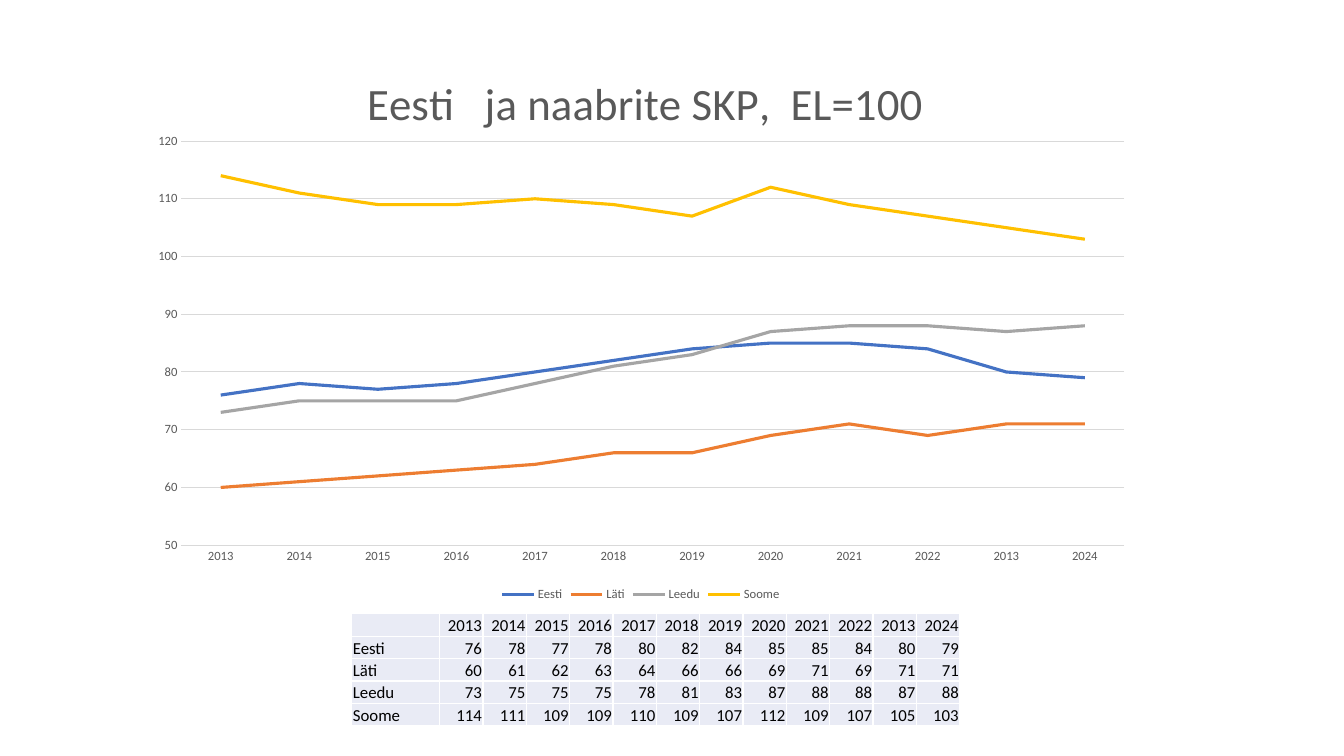
from dataclasses import dataclass

from lxml.etree import SubElement
from pptx import Presentation
from pptx.chart.data import CategoryChartData
from pptx.dml.color import RGBColor as Color
from pptx.enum.chart import XL_CHART_TYPE as ChartType
from pptx.enum.chart import XL_LEGEND_POSITION as LegendPosition
from pptx.enum.chart import XL_TICK_MARK as TickMark
from pptx.enum.text import MSO_ANCHOR as Anchor
from pptx.enum.text import PP_ALIGN as Align
from pptx.oxml.ns import qn
from pptx.util import Inches, Pt


@dataclass(frozen=True)
class Theme:
    font: str = "Calibri"
    ink: str = "000000"
    muted: str = "595959"
    grid: str = "D9D9D9"
    cell: str = "E9EBF5"
    border: str = "FFFFFF"
    lines: tuple = ("4472C4", "ED7D31", "A5A5A5", "FFC000")
    title_size: int = 32
    table_size: int = 12
    label_size: int = 9


@dataclass(frozen=True)
class Box:
    left: float
    top: float
    width: float
    height: float

    def lengths(self):
        return [Inches(side) for side in (self.left, self.top, self.width, self.height)]


THEME = Theme()
TITLE = "Eesti   ja naabrite SKP,  EL=100"
YEARS = ["2013", "2014", "2015", "2016", "2017", "2018",
         "2019", "2020", "2021", "2022", "2013", "2024"]
GDP = {
    "Eesti": [76, 78, 77, 78, 80, 82, 84, 85, 85, 84, 80, 79],
    "Läti": [60, 61, 62, 63, 64, 66, 66, 69, 71, 69, 71, 71],
    "Leedu": [73, 75, 75, 75, 78, 81, 83, 87, 88, 88, 87, 88],
    "Soome": [114, 111, 109, 109, 110, 109, 107, 112, 109, 107, 105, 103],
}


def style_font(font, size, color):
    font.name = THEME.font
    font.size = Pt(size)
    font.bold = False
    font.color.rgb = Color.from_string(color)


def style_line(line, color, width):
    line.color.rgb = Color.from_string(color)
    line.width = Pt(width)


def set_layout(parent, index, settings):
    for old in parent.findall(qn("c:layout")):
        parent.remove(old)
    layout = SubElement(parent, qn("c:layout"))
    parent.insert(index, layout)
    manual = SubElement(layout, qn("c:manualLayout"))
    for name, value in settings.items():
        SubElement(manual, qn(f"c:{name}")).set("val", str(value))


def place_chart_parts(chart, box):
    set_layout(chart.element.find(".//" + qn("c:title")), 1, {
        "xMode": "edge", "yMode": "edge",
        "x": 2.2 / box.width, "y": 0.23 / box.height,
    })
    set_layout(chart.element.find(".//" + qn("c:plotArea")), 0, {
        "layoutTarget": "inner", "xMode": "edge", "yMode": "edge",
        "x": 0.44 / box.width, "y": 1 / box.height,
        "w": 9.35 / box.width, "h": 4.01 / box.height,
    })


def add_gdp_chart(page, box):
    data = CategoryChartData()
    data.categories = YEARS
    for country, values in GDP.items():
        data.add_series(country, values)
    chart = page.shapes.add_chart(ChartType.LINE, *box.lengths(), data).chart
    style_font(chart.font, THEME.label_size, THEME.muted)

    chart.has_title = True
    title = chart.chart_title.text_frame
    title.text = TITLE
    style_font(title.paragraphs[0].font, THEME.title_size, THEME.muted)

    chart.has_legend = True
    chart.legend.position = LegendPosition.BOTTOM
    chart.legend.include_in_layout = False
    style_font(chart.legend.font, THEME.label_size, THEME.muted)

    for axis in (chart.category_axis, chart.value_axis):
        axis.major_tick_mark = axis.minor_tick_mark = TickMark.NONE
        style_font(axis.tick_labels.font, THEME.label_size, THEME.muted)
    style_line(chart.category_axis.format.line, THEME.grid, 0.75)
    scale = chart.value_axis
    scale.minimum_scale, scale.maximum_scale, scale.major_unit = 50, 120, 10
    scale.format.line.fill.background()
    style_line(scale.major_gridlines.format.line, THEME.grid, 0.75)

    chart.plots[0].vary_by_categories = False
    for series, color in zip(chart.plots[0].series, THEME.lines):
        series.smooth = False
        style_line(series.format.line, color, 2.25)
    place_chart_parts(chart, box)


def add_borders(cell):
    properties = cell._tc.get_or_add_tcPr()
    for side in ("lnL", "lnR", "lnT", "lnB"):
        line = SubElement(properties, qn(f"a:{side}"), w=str(Pt(1)))
        fill = SubElement(line, qn("a:solidFill"))
        SubElement(fill, qn("a:srgbClr"), val=THEME.border)


def fill_cell(cell, text, align):
    add_borders(cell)
    cell.fill.solid()
    cell.fill.fore_color.rgb = Color.from_string(THEME.cell)
    cell.margin_left = cell.margin_right = cell.margin_top = Inches(0.01)
    cell.margin_bottom = 0
    cell.vertical_anchor = Anchor.BOTTOM
    para = cell.text_frame.paragraphs[0]
    para.alignment = align
    style_font(para.font, THEME.table_size, THEME.ink)
    if text:
        para.add_run().text = text
    else:
        SubElement(para._p, qn("a:endParaRPr"), sz=str(THEME.table_size * 100))


def add_gdp_table(page, box):
    rows = [["", *YEARS]] + [[country, *values] for country, values in GDP.items()]
    table = page.shapes.add_table(len(rows), len(rows[0]), *box.lengths()).table
    table.first_row = table.horz_banding = False
    name_width = 0.87
    table.columns[0].width = Inches(name_width)
    for column in list(table.columns)[1:]:
        column.width = Inches((box.width - name_width) / len(YEARS))
    for row_index, row in enumerate(rows):
        table.rows[row_index].height = Inches(box.height / len(rows))
        for column_index, value in enumerate(row):
            align = Align.RIGHT if column_index else Align.LEFT
            fill_cell(table.cell(row_index, column_index), str(value), align)


def main():
    deck = Presentation()
    deck.slide_width, deck.slide_height = Inches(13.33), Inches(7.5)
    page = deck.slides.add_slide(deck.slide_layouts[6])
    add_gdp_chart(page, Box(1.36, 0.4, 9.99, 5.61))
    add_gdp_table(page, Box(3.49, 6.09, 6.03, 1.11))
    deck.save("out.pptx")


if __name__ == "__main__":
    main()
